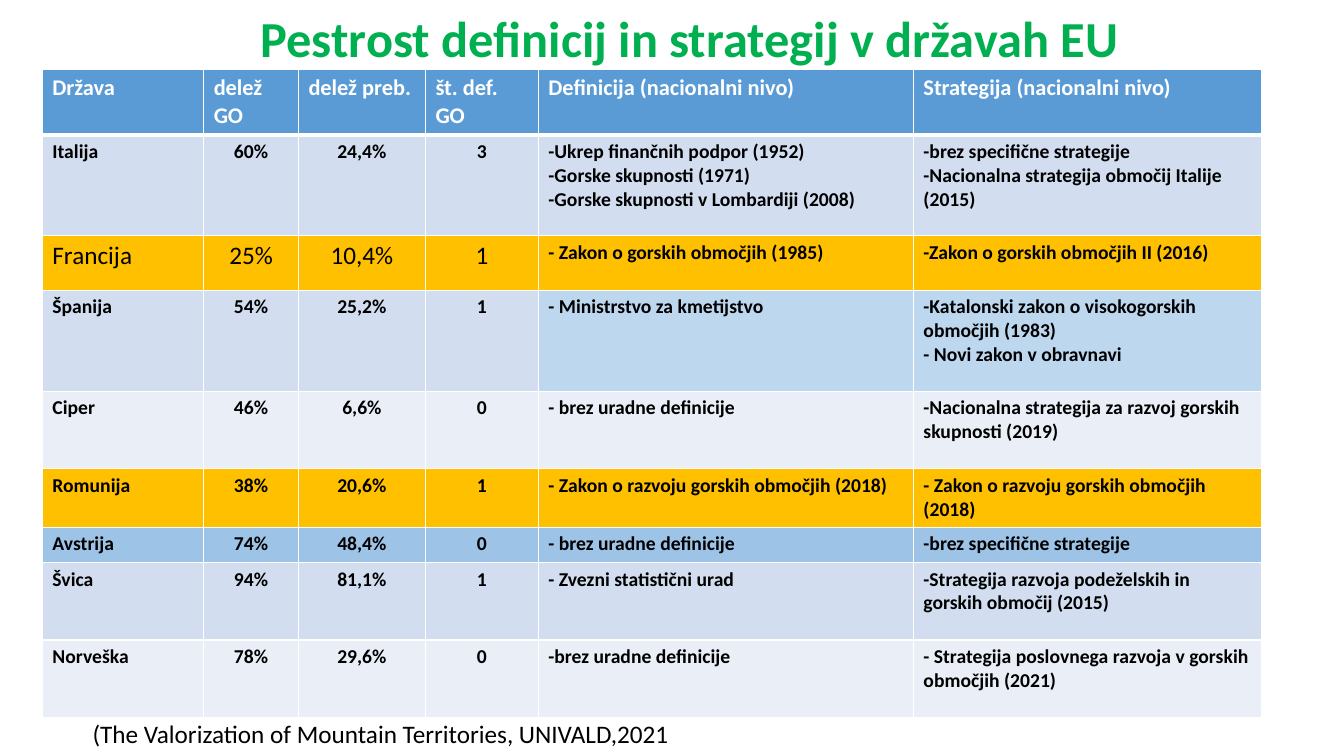
from pptx import Presentation
from pptx.dml.color import RGBColor as Rgb
from pptx.enum.text import MSO_ANCHOR as Anchor, PP_ALIGN as Align
from pptx.oxml.ns import qn
from pptx.util import Inches, Pt
from lxml.etree import SubElement as Sub

# Content
TITLE = "Pestrost definicij in strategij v državah EU"
SOURCE = "(The Valorization of Mountain Territories, UNIVALD,2021"
HEAD = ("Država", "delež GO", "delež preb.", "št. def. GO",
        "Definicija (nacionalni nivo)", "Strategija (nacionalni nivo)")
# Row height, row fill, cell texts
ROWS = [
    (0.65, "head", HEAD),
    (1.0, "band", ("Italija", "60%", "24,4%", "3",
                   "-Ukrep finančnih podpor (1952)\n-Gorske skupnosti (1971)\n"
                   "-Gorske skupnosti v Lombardiji (2008)",
                   "-brez specifične strategije\n"
                   "-Nacionalna strategija območij Italije (2015)")),
    (0.54, "gold", ("Francija", "25%", "10,4%", "1",
                    "- Zakon o gorskih območjih (1985)",
                    "-Zakon o gorskih območjih II (2016)")),
    (1.0, "band", ("Španija", "54%", "25,2%", "1",
                   "- Ministrstvo za kmetijstvo",
                   "-Katalonski zakon o visokogorskih območjih (1983)\n"
                   "- Novi zakon v obravnavi")),
    (0.77, "pale", ("Ciper", "46%", "6,6%", "0",
                    "- brez uradne definicije",
                    "-Nacionalna strategija za razvoj gorskih skupnosti (2019)")),
    (0.58, "gold", ("Romunija", "38%", "20,6%", "1",
                    "- Zakon o razvoju gorskih območjih (2018)",
                    "- Zakon o razvoju gorskih območjih (2018)")),
    (0.35, "blue", ("Avstrija", "74%", "48,4%", "0",
                    "- brez uradne definicije",
                    "-brez specifične strategije")),
    (0.77, "band", ("Švica", "94%", "81,1%", "1",
                    "- Zvezni statistični urad",
                    "-Strategija razvoja podeželskih in gorskih območij (2015)")),
    (0.77, "pale", ("Norveška", "78%", "29,6%", "0",
                    "-brez uradne definicije",
                    "- Strategija poslovnega razvoja v gorskih območjih (2021)")),
]
COLS = (1.6, 0.94, 1.26, 1.12, 3.72, 3.45)
LIGHT = {(3, 4), (3, 5)}                     # cells in a lighter blue
LARGE = {(2, col) for col in range(4)}       # cells in large regular type

THEME = {
    "font": "Calibri",
    "color": {"title": "00B050", "text": "000000", "white": "FFFFFF",
              "head": "5B9BD5", "band": "D2DEEF", "pale": "EAEFF7",
              "gold": "FFC000", "blue": "9DC3E6", "light": "BDD7EE"},
    "size": {"title": 36, "large": 18, "head": 16, "body": 14},
}


def color(name):
    return Rgb.from_string(THEME["color"][name])


def style(frame, size, tint, bold=False, align=Align.LEFT):
    for para in frame.paragraphs:
        para.alignment = align
        for run in para.runs:
            font = run.font
            font.name, font.size = THEME["font"], Pt(THEME["size"][size])
            font.bold, font.color.rgb = bold, color(tint)


def add_text(slide, text, box):
    frame = slide.shapes.add_textbox(*map(Inches, box)).text_frame
    frame.word_wrap = True
    frame.text = text
    return frame


def edge(cell, heavy):
    props = cell._tc.get_or_add_tcPr()
    for side in "LRTB":
        width = 3 if heavy and side == "B" else 1
        line = Sub(props, qn(f"a:ln{side}"), w=str(Pt(width)))
        fill = Sub(line, qn("a:solidFill"))
        Sub(fill, qn("a:srgbClr"), val=THEME["color"]["white"])


def fill_cell(cell, row, col, text, shade):
    cell.text_frame.text = text
    align = Align.CENTER if row and col in (1, 2, 3) else Align.LEFT
    if row == 0:
        style(cell.text_frame, "head", "white", True, align)
    elif (row, col) in LARGE:
        style(cell.text_frame, "large", "text", False, align)
    else:
        style(cell.text_frame, "body", "text", True, align)
    edge(cell, row == 0)
    cell.fill.solid()
    cell.fill.fore_color.rgb = color("light" if (row, col) in LIGHT else shade)


def add_grid(slide):
    high = sum(row[0] for row in ROWS)
    box = (0.42, 0.69, sum(COLS), high)
    grid = slide.shapes.add_table(len(ROWS), len(COLS), *map(Inches, box)).table
    for col, width in enumerate(COLS):
        grid.columns[col].width = Inches(width)
    for row, (height, shade, texts) in enumerate(ROWS):
        grid.rows[row].height = Inches(height)
        for col, text in enumerate(texts):
            fill_cell(grid.cell(row, col), row, col, text, shade)


def main():
    deck = Presentation()
    deck.slide_width, deck.slide_height = Inches(13.33), Inches(7.5)
    slide = deck.slides.add_slide(deck.slide_layouts[6])

    # Title
    title = add_text(slide, TITLE, (1.84, -0.1, 10, 0.83))
    title.vertical_anchor = Anchor.BOTTOM
    title.paragraphs[0].line_spacing = 0.9
    style(title, "title", "title", True, Align.CENTER)

    # Table of countries
    add_grid(slide)

    # Source line
    style(add_text(slide, SOURCE, (0.82, 7.08, 8.49, 0.4)), "large", "text")

    deck.save("out.pptx")


if __name__ == "__main__":
    main()
